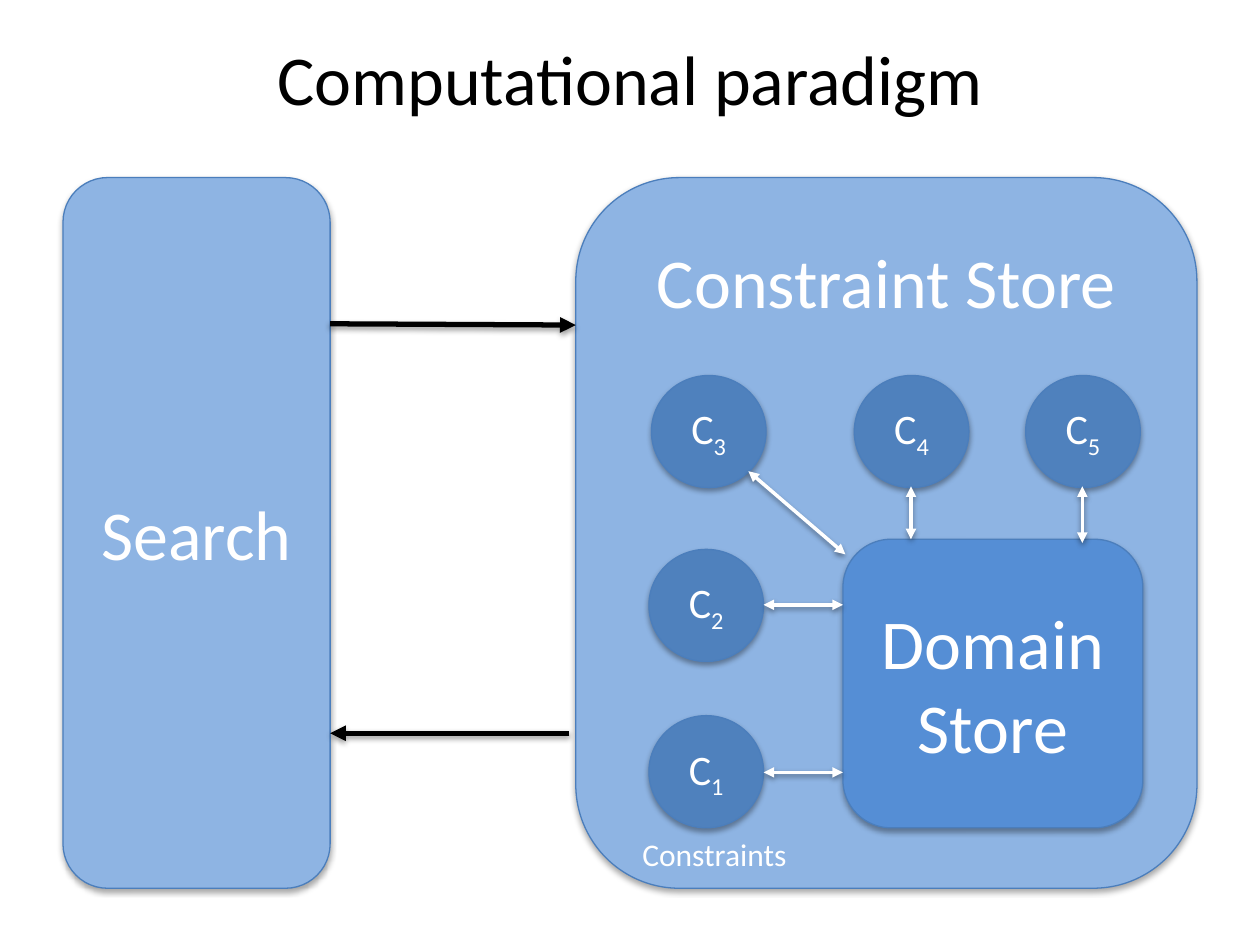
"""Build the Computational paradigm slide."""
from dataclasses import dataclass

import pptx
import pptx.dml.color
import pptx.enum.shapes
import pptx.enum.text
import pptx.oxml
import pptx.oxml.ns
import pptx.shapes.autoshape
import pptx.shapes.connector
import pptx.slide
import pptx.text.text
import pptx.util
from lxml import etree

Inches = pptx.util.Inches
RGBColor = pptx.dml.color.RGBColor
Shape = pptx.enum.shapes.MSO_SHAPE
Anchor = pptx.enum.text.MSO_ANCHOR
Align = pptx.enum.text.PP_ALIGN

BLACK = RGBColor(0x00, 0x00, 0x00)
WHITE = RGBColor(0xFF, 0xFF, 0xFF)
OUTLINE = RGBColor(0x4B, 0x7E, 0xBC)
PALE_BLUE = RGBColor(0x8E, 0xB4, 0xE3)
MID_BLUE = RGBColor(0x55, 0x8E, 0xD5)
CIRCLE_BLUE = RGBColor(0x4F, 0x81, 0xBD)
FONT = "Calibri"
CIRCLE_WIDTH, CIRCLE_HEIGHT = 0.91, 0.89


@dataclass
class Panel:
    text: str
    left: float
    top: float
    width: float
    height: float
    fill: RGBColor
    anchor: Anchor = Anchor.MIDDLE
    top_inset: float = 0.05


@dataclass
class Constraint:
    number: int
    left: float
    top: float


@dataclass
class Arrow:
    start: tuple[float, float]
    end: tuple[float, float]
    color: RGBColor = WHITE
    width: float = 2
    double: bool = True


PANELS = [
    Panel("Search", 0.5, 1.41, 2.12, 5.64, PALE_BLUE),
    Panel("Constraint Store", 4.57, 1.41, 4.93, 5.64, PALE_BLUE, Anchor.TOP, 0.24),
    Panel("Domain Store", 6.69, 4.28, 2.38, 2.29, MID_BLUE),
]
CONSTRAINTS = [
    Constraint(2, 5.15, 4.36),
    Constraint(1, 5.15, 5.68),
    Constraint(3, 5.17, 2.98),
    Constraint(5, 8.14, 2.98),
    Constraint(4, 6.78, 2.98),
]
ARROWS = [
    Arrow((6.06, 6.13), (6.69, 6.13)),
    Arrow((6.06, 4.8), (6.69, 4.8)),
    Arrow((5.94, 3.74), (6.71, 4.4)),
    Arrow((7.23, 3.86), (7.23, 4.28)),
    Arrow((8.59, 3.86), (8.59, 4.31)),
    Arrow((2.62, 2.57), (4.57, 2.58), BLACK, 3, False),
    Arrow((4.52, 5.82), (2.62, 5.82), BLACK, 3, False),
]


def add_run(paragraph: pptx.text.text._Paragraph, text: str, size: float,
            color: RGBColor = WHITE, baseline: int = 0) -> None:
    run = paragraph.add_run()
    run.text = text
    run.font.name = FONT
    run.font.size = pptx.util.Pt(size)
    run.font.color.rgb = color
    if baseline:
        run._r.get_or_add_rPr().set("baseline", str(baseline * 1000))


def add_shadow(effects: etree._Element, distance: int, opacity: int) -> None:
    namespace = pptx.oxml.ns.nsdecls("a")
    effects.append(pptx.oxml.parse_xml(
        f'<a:outerShdw {namespace} blurRad="40000" dist="{distance}" dir="5400000" '
        f'rotWithShape="0"><a:srgbClr val="{BLACK}"><a:alpha val="{opacity * 1000}"/>'
        "</a:srgbClr></a:outerShdw>"))


def add_node(slide: pptx.slide.Slide, kind: Shape, left: float, top: float, width: float,
             height: float, fill: RGBColor) -> pptx.shapes.autoshape.Shape:
    shape = slide.shapes.add_shape(
        kind, Inches(left), Inches(top), Inches(width), Inches(height))
    shape.fill.solid()
    shape.fill.fore_color.rgb = fill
    shape.line.color.rgb = OUTLINE
    shape.line.width = pptx.util.Pt(0.75)
    shape.shadow.inherit = False
    add_shadow(shape._element.spPr.find(pptx.oxml.ns.qn("a:effectLst")), 23000, 35)
    shape.text_frame.word_wrap = True
    shape.text_frame.vertical_anchor = Anchor.MIDDLE
    shape.text_frame.paragraphs[0].alignment = Align.CENTER
    return shape


def add_panel(slide: pptx.slide.Slide, panel: Panel) -> None:
    shape = add_node(slide, Shape.ROUNDED_RECTANGLE, panel.left, panel.top,
                     panel.width, panel.height, panel.fill)
    shape.text_frame.vertical_anchor = panel.anchor
    shape.text_frame.margin_top = Inches(panel.top_inset)
    add_run(shape.text_frame.paragraphs[0], panel.text, 40)


def add_constraint(slide: pptx.slide.Slide, constraint: Constraint) -> None:
    shape = add_node(slide, Shape.OVAL, constraint.left, constraint.top,
                     CIRCLE_WIDTH, CIRCLE_HEIGHT, CIRCLE_BLUE)
    paragraph = shape.text_frame.paragraphs[0]
    add_run(paragraph, "C", 24)
    add_run(paragraph, str(constraint.number), 24, baseline=-25)


def add_arrow(slide: pptx.slide.Slide, arrow: Arrow) -> None:
    connector = slide.shapes.add_connector(
        pptx.enum.shapes.MSO_CONNECTOR.STRAIGHT,
        *(Inches(value) for value in arrow.start + arrow.end))
    connector.line.color.rgb = arrow.color
    connector.line.width = pptx.util.Pt(arrow.width)
    line = connector.line._get_or_add_ln()
    for name in ("a:headEnd", "a:tailEnd") if arrow.double else ("a:tailEnd",):
        etree.SubElement(line, pptx.oxml.ns.qn(name), type="triangle")
    effects = etree.SubElement(connector._element.spPr, pptx.oxml.ns.qn("a:effectLst"))
    add_shadow(effects, 20000, 38)


def add_title(slide: pptx.slide.Slide) -> None:
    title = slide.shapes.title
    title.left, title.top = Inches(0.5), Inches(0.26)
    title.width, title.height = Inches(9), Inches(0.71)
    title.text_frame.vertical_anchor = Anchor.MIDDLE
    paragraph = title.text_frame.paragraphs[0]
    paragraph.alignment = Align.CENTER
    add_run(paragraph, "Computational paradigm", 40, BLACK)


def add_caption(slide: pptx.slide.Slide) -> None:
    caption = slide.shapes.add_textbox(Inches(5), Inches(6.58), Inches(1.46), Inches(0.4))
    caption.text_frame.word_wrap = True
    add_run(caption.text_frame.paragraphs[0], "Constraints", 18)


def main() -> None:
    presentation = pptx.Presentation()
    presentation.slide_width, presentation.slide_height = Inches(10), Inches(7.5)
    slide = presentation.slides.add_slide(presentation.slide_layouts[5])
    add_title(slide)
    for panel in PANELS:
        add_panel(slide, panel)
    for constraint in CONSTRAINTS:
        add_constraint(slide, constraint)
    for arrow in ARROWS:
        add_arrow(slide, arrow)
    add_caption(slide)
    presentation.save("out.pptx")


if __name__ == "__main__":
    main()
